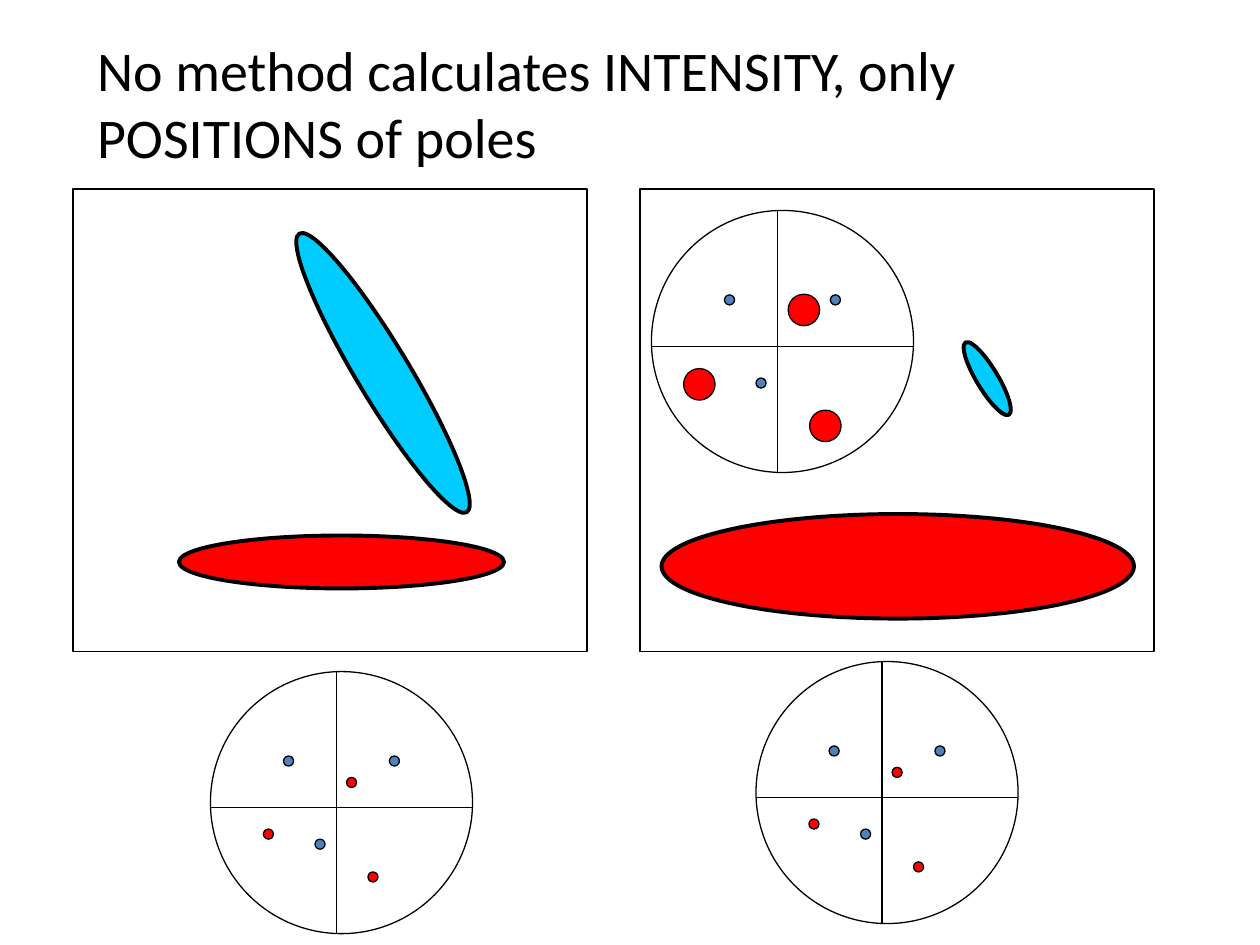
import pptx
import pptx.util
import pptx.dml.color
import pptx.enum.shapes
import pptx.enum.text
import pptx.oxml.ns
import lxml.etree

Inches = pptx.util.Inches
Pt = pptx.util.Pt
SHAPE = pptx.enum.shapes.MSO_SHAPE


class Theme:
    black = pptx.dml.color.RGBColor.from_string("000000")
    red = pptx.dml.color.RGBColor.from_string("FF0000")
    cyan = pptx.dml.color.RGBColor.from_string("00CCFF")
    blue = pptx.dml.color.RGBColor.from_string("4F81BD")
    font = "Calibri"
    title = Pt(32)
    thin = Pt(0.75)
    thick = Pt(2.25)


def draw(shapes, kind, box, fill=None, width=Theme.thin, turn=0):
    """Add an outlined shape; box is left, top, width, height in inches."""
    shape = shapes.add_shape(kind, *[Inches(v) for v in box])
    shape.shadow.inherit = False
    shape.rotation = turn
    if fill is None:
        shape.fill.background()
    else:
        shape.fill.solid()
        shape.fill.fore_color.rgb = fill
    shape.line.color.rgb = Theme.black
    shape.line.width = width


def rule(shapes, *ends):
    """Add a thin straight line from x1, y1 to x2, y2 in inches."""
    line = shapes.add_connector(
        pptx.enum.shapes.MSO_CONNECTOR.STRAIGHT, *[Inches(v) for v in ends])
    line.line.color.rgb = Theme.black
    line.line.width = Theme.thin
    props = line._element.spPr
    lxml.etree.SubElement(props, pptx.oxml.ns.qn("a:effectLst"))


deck = pptx.Presentation()
deck.slide_width, deck.slide_height = Inches(10), Inches(7.5)
slide = deck.slides.add_slide(deck.slide_layouts[5])

# Title
title = slide.shapes.title
title.left, title.top = Inches(0.67), Inches(0.23)
title.width, title.height = Inches(7.33), Inches(1.17)
frame = title.text_frame
frame.text = "No method calculates INTENSITY, only POSITIONS of poles"
frame.word_wrap = True
frame.auto_size = pptx.enum.text.MSO_AUTO_SIZE.NONE
frame.vertical_anchor = pptx.enum.text.MSO_ANCHOR.TOP
para = frame.paragraphs[0]
para.alignment = pptx.enum.text.PP_ALIGN.LEFT
para.font.name = Theme.font
para.font.size = Theme.title
para.font.color.rgb = Theme.black

# Two panels
for left in (0.58, 5.08):
    draw(slide.shapes, SHAPE.RECTANGLE, (left, 1.5, 4.08, 3.67))

# Strain ellipses: box, fill, rotation
ovals = [
    ((1.42, 4.25, 2.58, 0.42), Theme.red, 0),
    ((1.75, 2.75, 2.58, 0.42), Theme.cyan, 59),
    ((5.25, 4.08, 3.75, 0.83), Theme.red, 0),
    ((7.5, 2.92, 0.67, 0.17), Theme.cyan, 59),
]
for box, fill, turn in ovals:
    draw(slide.shapes, SHAPE.OVAL, box, fill, Theme.thick, turn)

# Pole plots: dot centres are measured from the plot's top left corner
size, small, large = 2.08, 0.08, 0.25
blues = [(0.62, 0.71), (1.46, 0.71), (0.87, 1.37)]
reds = [(1.29, 1.63), (0.46, 1.29), (1.12, 0.88)]
heavy = [(1.38, 1.71), (0.38, 1.38), (1.21, 0.79)]
plots = [
    (1.67, 5.33, reds, small),
    (6, 5.25, reds, small),
    (5.17, 1.67, heavy, large),
]
for left, top, spots, wide in plots:
    group = slide.shapes.add_group_shape().shapes
    draw(group, SHAPE.OVAL, (left, top, size, size))
    rule(group, left, top + 1.08, left + size, top + 1.08)
    rule(group, left + 1, top + size, left + 1, top)
    for dots, dot, fill in ((blues, small, Theme.blue), (spots, wide, Theme.red)):
        for x, y in dots:
            draw(group, SHAPE.OVAL,
                 (left + x - dot / 2, top + y - dot / 2, dot, dot), fill)

deck.save("out.pptx")
